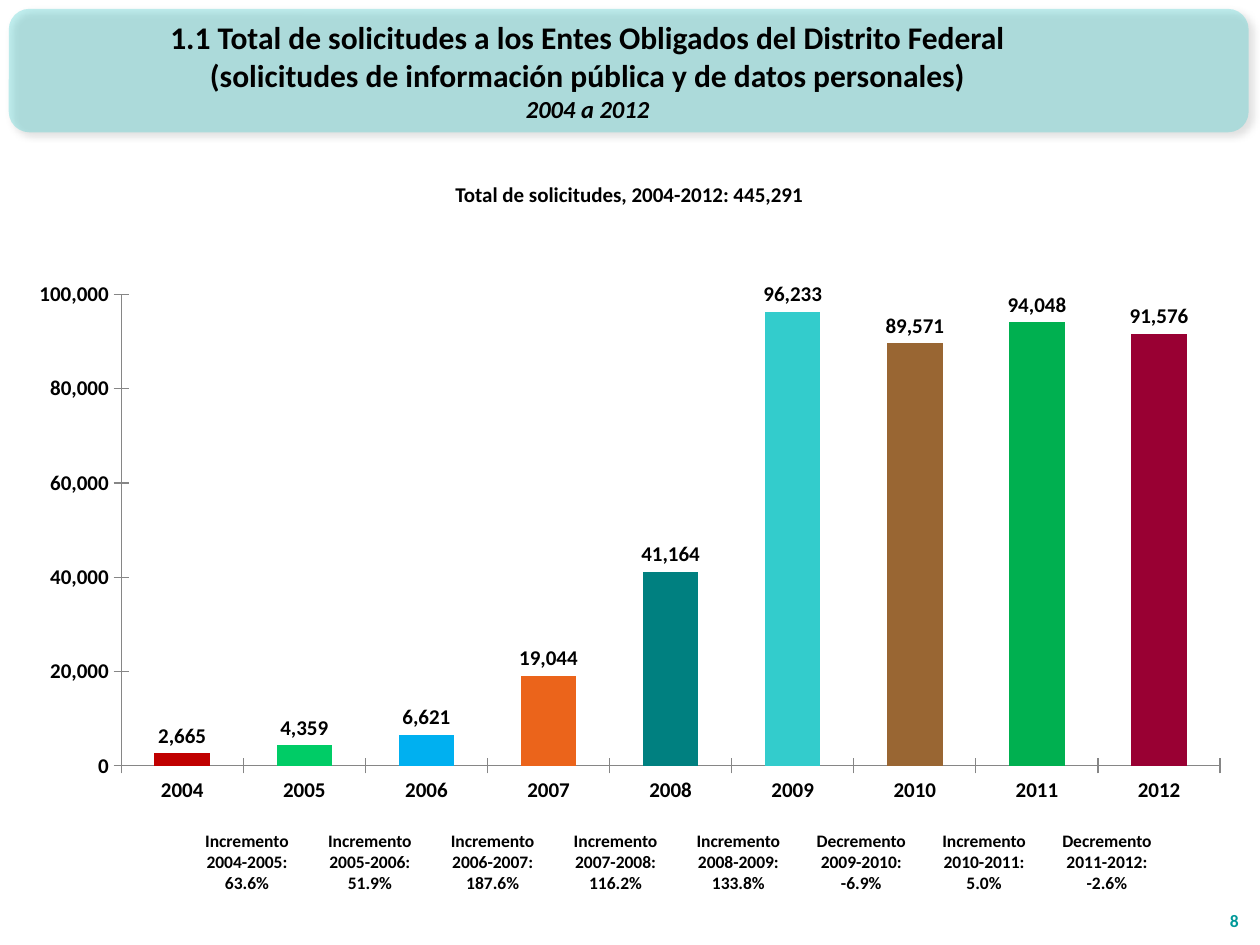
from lxml import etree
from pptx import Presentation
from pptx.chart.data import CategoryChartData
from pptx.dml.color import RGBColor
from pptx.enum.chart import XL_CHART_TYPE, XL_LABEL_POSITION, XL_TICK_MARK
from pptx.enum.shapes import MSO_SHAPE
from pptx.enum.text import MSO_ANCHOR, MSO_AUTO_SIZE, PP_ALIGN
from pptx.oxml import parse_xml
from pptx.oxml.ns import qn
from pptx.util import Inches, Pt

COLUMN = XL_CHART_TYPE.COLUMN_CLUSTERED
OUTSIDE = XL_LABEL_POSITION.OUTSIDE_END
CROSS = XL_TICK_MARK.CROSS
ROUND = MSO_SHAPE.ROUNDED_RECTANGLE
TOP, MIDDLE, BOTTOM = MSO_ANCHOR.TOP, MSO_ANCHOR.MIDDLE, MSO_ANCHOR.BOTTOM
CENTER, RIGHT = PP_ALIGN.CENTER, PP_ALIGN.RIGHT
GROW = MSO_AUTO_SIZE.SHAPE_TO_FIT_TEXT
NS_A = "http://schemas.openxmlformats.org/drawingml/2006/main"

YEARS = [str(year) for year in range(2004, 2013)]
TOTALS = [2665, 4359, 6621, 19044, 41164, 96233, 89571, 94048, 91576]
COLORS = ["C00000", "00CC66", "00B0F0", "EB641B", "008080",
          "33CCCC", "996633", "00B050", "990033"]
RATES = ["63.6%", "51.9%", "187.6%", "116.2%", "133.8%", "-6.9%", "5.0%", "-2.6%"]


def rgb(code):
    return RGBColor.from_string(code)


class Deck:
    font = "Calibri"
    ink = "000000"
    axis = "868686"

    def __init__(self, wide, high):
        self.prs = Presentation()
        self.prs.slide_width, self.prs.slide_height = Inches(wide), Inches(high)
        self.slide = self.prs.slides.add_slide(self.prs.slide_layouts[6])

    def style(self, font, size, color=None, italic=None):
        font.name, font.size, font.bold, font.italic = self.font, Pt(size), True, italic
        font.color.rgb = rgb(color or self.ink)

    def text(self, box, lines, color=None, align=CENTER, anchor=TOP, grow=False):
        """Each line is (words, size) or (words, size, italic)."""
        frame = self.slide.shapes.add_textbox(*map(Inches, box)).text_frame
        frame.word_wrap = True
        frame.vertical_anchor = anchor
        if grow:
            frame.auto_size = GROW
        for i, (words, size, *italic) in enumerate(lines):
            para = frame.paragraphs[0] if i == 0 else frame.add_paragraph()
            para.alignment = align
            run = para.add_run()
            run.text = words
            self.style(run.font, size, color, *italic)

    def banner(self, box, color, alpha):
        shape = self.slide.shapes.add_shape(ROUND, *map(Inches, box))
        shape.fill.solid()
        shape.fill.fore_color.rgb = rgb(color)
        shape.line.fill.background()
        # Transparent fill and soft shadow
        tint = shape.fill._xPr.find(".//" + qn("a:srgbClr"))
        etree.SubElement(tint, qn("a:alpha"), val=str(alpha * 1000))
        shape._element.spPr.append(parse_xml(
            f'<a:effectLst xmlns:a="{NS_A}"><a:outerShdw blurRad="{Pt(4)}" '
            f'dist="{Pt(3)}" dir="2700000" algn="tl" rotWithShape="0">'
            '<a:srgbClr val="000000"><a:alpha val="40000"/></a:srgbClr>'
            '</a:outerShdw></a:effectLst>'))

    def chart(self, box, cats, vals, colors, plot):
        data = CategoryChartData(number_format="#,##0")
        data.categories = cats
        data.add_series("Solicitudes", vals)
        chart = self.slide.shapes.add_chart(COLUMN, *map(Inches, box), data).chart
        chart.has_legend = chart.has_title = False
        self.style(chart.font, 12)
        # Axes
        for axis in (chart.category_axis, chart.value_axis):
            axis.has_major_gridlines = False
            axis.major_tick_mark = CROSS
            axis.format.line.color.rgb = rgb(self.axis)
        scale = chart.value_axis
        scale.minimum_scale, scale.maximum_scale, scale.major_unit = 0, 100000, 20000
        scale.tick_labels.number_format = "#,##0"
        scale.tick_labels.number_format_is_linked = False
        # Bars and labels
        bars = chart.plots[0]
        bars.gap_width = 120
        bars.vary_by_categories = False
        bars.has_data_labels = True
        labels = bars.data_labels
        labels.show_value = True
        labels.position = OUTSIDE
        labels.number_format, labels.number_format_is_linked = "#,##0", False
        for i, color in enumerate(colors):
            fill = bars.series[0].points[i].format.fill
            fill.solid()
            fill.fore_color.rgb = rgb(color)
        # Fixed inner plot area
        area = chart._chartSpace.find(".//" + qn("c:plotArea"))
        for old in area.findall(qn("c:layout")):
            area.remove(old)
        layout = etree.Element(qn("c:layout"))
        area.insert(0, layout)
        manual = etree.SubElement(layout, qn("c:manualLayout"))
        parts = [("layoutTarget", "inner"), ("xMode", "edge"), ("yMode", "edge")]
        for tag, val in parts + list(zip("xywh", plot)):
            etree.SubElement(manual, qn("c:" + tag), val=str(val))


def main():
    deck = Deck(10, 7.5)

    # Heading
    deck.banner((0.07, 0.07, 9.84, 0.98), "33CCCC", 30)
    deck.text((0.08, 0.09, 9.17, 0.94), [
        ("1.1 Total de solicitudes a los Entes Obligados del Distrito Federal", 18),
        ("(solicitudes de información pública y de datos personales)", 18),
        ("2004 a 2012", 14, True)], anchor=MIDDLE)
    deck.text((1.86, 1.39, 6.27, 0.3),
              [("Total de solicitudes, 2004-2012: 445,291", 12)], grow=True)

    # Requests per year
    deck.chart((0.08, 2.02, 9.8, 4.51), YEARS, TOTALS, COLORS, (0.09, 0.07, 0.89, 0.83))

    # Change between each pair of years
    for i, rate in enumerate(RATES):
        kind = "Decremento" if rate.startswith("-") else "Incremento"
        deck.text((1.46 + 0.975 * i, 6.54, 1, 0.61),
                  [(kind, 10), (f"{YEARS[i]}-{YEARS[i + 1]}:", 10), (rate, 10)], grow=True)

    # Page number
    deck.text((9.45, 7.04, 0.48, 0.4), [("8", 10)], "009999", RIGHT, BOTTOM)
    deck.prs.save("out.pptx")


if __name__ == "__main__":
    main()
